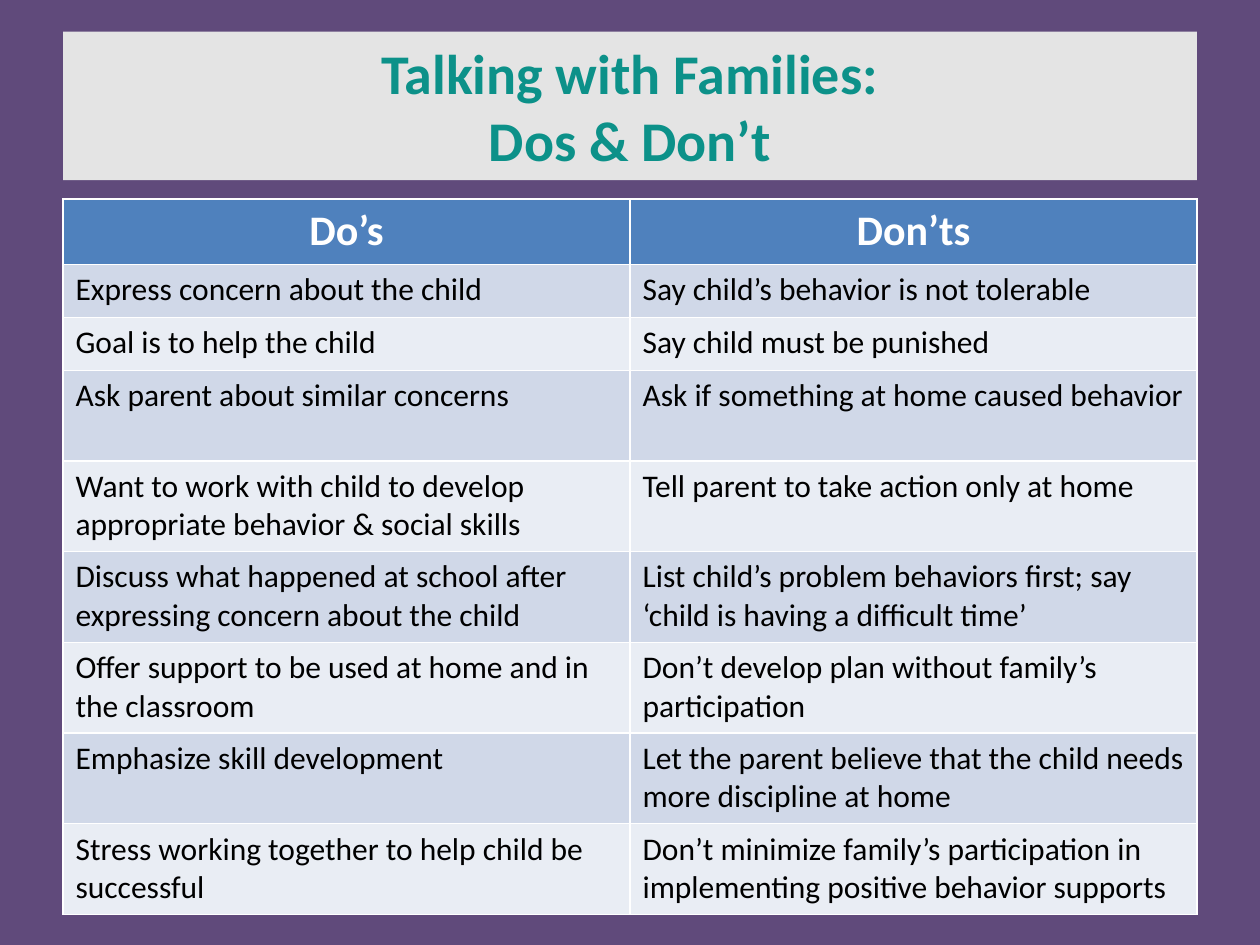
"""Build the slide on talking with families: a title band over a two-column table."""
from typing import NamedTuple

from pptx import Presentation
from pptx.dml.color import RGBColor
from pptx.enum.text import MSO_ANCHOR, MSO_AUTO_SIZE, PP_ALIGN
from pptx.util import Inches, Pt

WIDE, HIGH = 10, 7.5
LEFT, SPAN = 0.05 * WIDE, 0.9 * WIDE
HEAD, ONE, TWO = 0.52, 0.42, 0.72
BANDS = "D0D8E8", "E9EDF4"


class Row(NamedTuple):
    do: str
    dont: str
    high: float = TWO


ROWS = [
    Row("Express concern about the child", "Say child’s behavior is not tolerable", ONE),
    Row("Goal is to help the child", "Say child must be punished", ONE),
    Row("Ask parent about similar concerns", "Ask if something at home caused behavior"),
    Row("Want to work with child to develop appropriate behavior & social skills",
        "Tell parent to take action only at home"),
    Row("Discuss what happened at school after expressing concern about the child",
        "List child’s problem behaviors first; say ‘child is having a difficult time’"),
    Row("Offer support to be used at home and in the classroom",
        "Don’t develop plan without family’s participation"),
    Row("Emphasize skill development",
        "Let the parent believe that the child needs more discipline at home"),
    Row("Stress working together to help child be successful",
        "Don’t minimize family’s participation in implementing positive behavior supports"),
]


def paint(fill, tone: str) -> None:
    fill.solid()
    fill.fore_color.rgb = RGBColor.from_string(tone)


def write(frame, text: str, *, size: int, tone: str, bold=False, align=PP_ALIGN.LEFT) -> None:
    frame.text = text
    for para in frame.paragraphs:
        para.alignment = align
        for run in para.runs:
            font = run.font
            font.name, font.size, font.bold = "Calibri", Pt(size), bold
            font.color.rgb = RGBColor.from_string(tone)


def draw_title(slide, text: str) -> None:
    title = slide.shapes.title
    title.left, title.top = Inches(LEFT), Inches(HIGH / 30)
    title.width, title.height = Inches(SPAN), Inches(1.18)
    paint(title.fill, "E4E4E4")
    frame = title.text_frame
    frame.auto_size, frame.vertical_anchor = MSO_AUTO_SIZE.NONE, MSO_ANCHOR.MIDDLE
    write(frame, text, size=32, tone="0C9189", bold=True, align=PP_ALIGN.CENTER)


def draw_row(table, at: int, row: Row, back: str, **style) -> None:
    table.rows[at].height = Inches(row.high)
    for cell, text in zip(table.rows[at].cells, (row.do, row.dont)):
        paint(cell.fill, back)
        write(cell.text_frame, text, **style)


def draw_table(slide, head: Row, rows: list[Row]) -> None:
    high = head.high + sum(row.high for row in rows)
    table = slide.shapes.add_table(
        len(rows) + 1, 2, Inches(LEFT), Inches(1.58), Inches(SPAN), Inches(high)).table
    draw_row(table, 0, head, "4F81BD", size=24, tone="FFFFFF", bold=True, align=PP_ALIGN.CENTER)
    for at, row in enumerate(rows, 1):
        draw_row(table, at, row, BANDS[(at - 1) % 2], size=18, tone="000000")


def main() -> None:
    deck = Presentation()
    deck.slide_width, deck.slide_height = Inches(WIDE), Inches(HIGH)
    slide = deck.slides.add_slide(deck.slide_layouts.get_by_name("Title Only"))
    paint(slide.background.fill, "604A7B")
    draw_title(slide, "Talking with Families:\nDos & Don’t")
    draw_table(slide, Row("Do’s", "Don’ts", HEAD), ROWS)
    deck.save("out.pptx")


if __name__ == "__main__":
    main()
